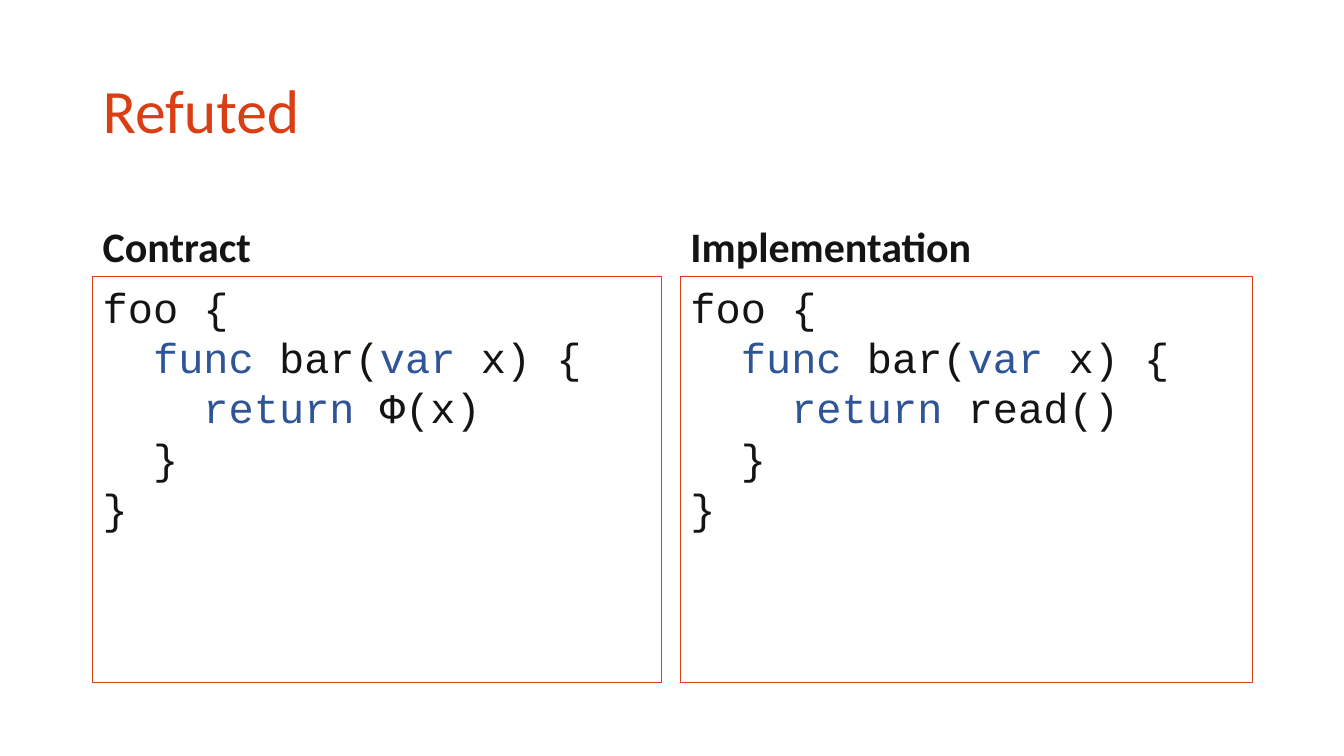
from pptx import Presentation
from pptx import util as u
from pptx.dml.color import RGBColor
from pptx.enum import shapes, text

COLORS = {"accent": "D93E14", "ink": "141414", "keyword": "2F5597"}
INDENT = 0.5

deck = Presentation()
deck.slide_width, deck.slide_height = u.Inches(13.33), u.Inches(7.5)
page = deck.slides.add_slide(deck.slide_layouts[6])


def add_span(para, words, color, **font):
    span = para.add_run()
    span.text = words
    span.font.color.rgb = RGBColor.from_string(COLORS[color])
    for name, value in font.items():
        setattr(span.font, name, value)


def add_heading(words, left, top, width, height, anchor, color, **font):
    box = page.shapes.add_textbox(*map(u.Inches, (left, top, width, height)))
    box.text_frame.word_wrap = True
    box.text_frame.vertical_anchor = anchor
    para = box.text_frame.paragraphs[0]
    para.line_spacing = 0.9
    add_span(para, words, color, name="Calibri", **font)


add_heading("Refuted", 0.92, 0.4, 11.5, 1.45, text.MSO_ANCHOR.MIDDLE,
            "accent", size=u.Pt(44))

columns = [
    ("Contract", 0.92, 5.64, "Φ(x)"),
    ("Implementation", 6.75, 5.67, "read()"),
]
for heading, left, width, result in columns:
    add_heading(heading, left, 1.84, width, 0.9, text.MSO_ANCHOR.BOTTOM,
                "ink", size=u.Pt(30), bold=True)

    box = page.shapes.add_shape(shapes.MSO_SHAPE.RECTANGLE,
                                *map(u.Inches, (left, 2.74, width, 4.03)))
    box.shadow.inherit = False
    box.fill.background()
    box.line.color.rgb = RGBColor.from_string(COLORS["accent"])
    box.line.width = u.Pt(0.75)
    frame = box.text_frame
    frame.word_wrap = True
    frame.vertical_anchor = text.MSO_ANCHOR.TOP

    code = [
        (0, [("foo {", "ink")]),
        (1, [("func", "keyword"), (" bar(", "ink"), ("var", "keyword"), (" x) {", "ink")]),
        (2, [("return ", "keyword"), (result, "ink")]),
        (1, [("}", "ink")]),
        (0, [("}", "ink")]),
    ]
    for row, (level, spans) in enumerate(code):
        para = frame.add_paragraph() if row else frame.paragraphs[0]
        para.alignment = text.PP_ALIGN.LEFT
        properties = para._p.get_or_add_pPr()
        properties.set("marL", str(u.Inches(INDENT * level)))
        properties.set("indent", "0")
        for words, color in spans:
            add_span(para, words, color, name="Courier New", size=u.Pt(30))

deck.save("out.pptx")
